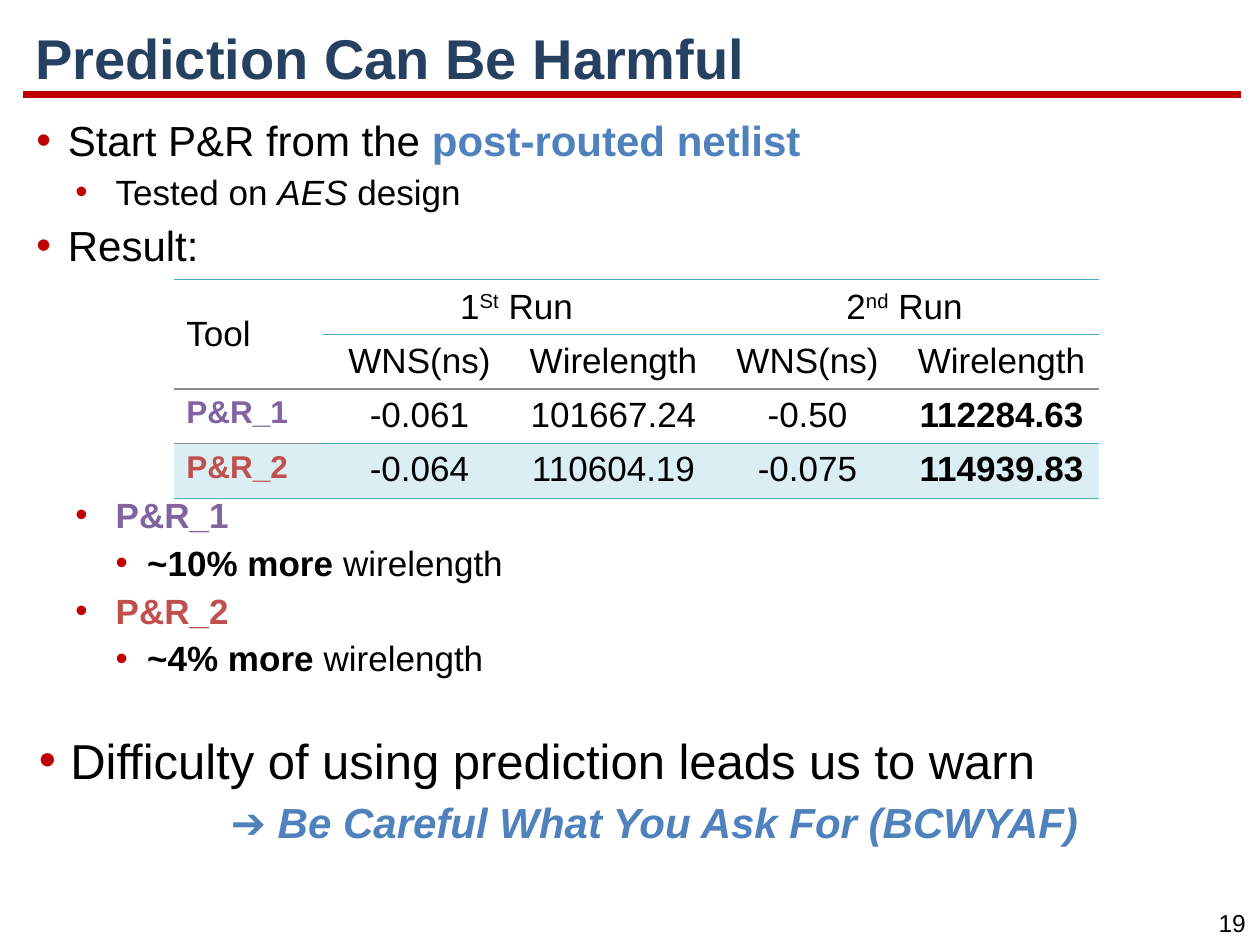
from dataclasses import dataclass

from lxml import etree
from pptx import Presentation
from pptx.dml.color import RGBColor as Rgb
from pptx.enum.shapes import MSO_CONNECTOR as Conn
from pptx.enum.text import MSO_ANCHOR as Anchor, PP_ALIGN as Align
from pptx.oxml.ns import qn
from pptx.util import Inches, Pt


@dataclass(frozen=True)
class Theme:
    font: str = "Arial"
    navy: str = "254061"
    red: str = "C00000"
    black: str = "000000"
    blue: str = "4F81BD"
    purple: str = "8064A2"
    brick: str = "C0504D"
    teal: str = "4BACC6"
    pale: str = "DBEEF4"
    gray: str = "8C8C8C"
    title: int = 32
    large: int = 28
    head: int = 24
    body: int = 20
    label: int = 18
    page: int = 14


T = Theme()
INDENTS = [(0.25, -0.25), (0.63, -0.32), (0.88, -0.25)]


def add_run(para, text, size=T.body, color=T.black, bold=False,
            italic=False, raised=False):
    run = para.add_run()
    run.text = text
    font = run.font
    font.name, font.size = T.font, Pt(size)
    font.bold, font.italic = bold, italic
    font.color.rgb = Rgb.from_string(color)
    if raised:
        font._element.set("baseline", "30000")


def add_box(slide, box, anchor=Anchor.TOP, wrap=True):
    frame = slide.shapes.add_textbox(*map(Inches, box)).text_frame
    frame.word_wrap = wrap
    frame.vertical_anchor = anchor
    return frame


def set_bullet(para, level):
    left, first = INDENTS[level]
    props = para._p.get_or_add_pPr()
    props.set("marL", str(Inches(left)))
    props.set("indent", str(Inches(first)))
    color = etree.SubElement(props, qn("a:buClr"))
    etree.SubElement(color, qn("a:srgbClr"), val=T.red)
    etree.SubElement(props, qn("a:buFont"), typeface=T.font)
    etree.SubElement(props, qn("a:buChar"), char="•")


def add_list(slide, box, items):
    """Each item is (level, size, runs); level None means a centred line."""
    frame = add_box(slide, box)
    for i, (level, size, runs) in enumerate(items):
        para = frame.add_paragraph() if i else frame.paragraphs[0]
        para.line_spacing = 0.85
        para.space_before = Pt(round(size * 0.345, 1) if i else 0)
        if level is None:
            para.alignment = Align.CENTER
            para._p.get_or_add_pPr().set("marL", str(Inches(0.31)))
        else:
            para.level = level
            set_bullet(para, level)
        for text, style in runs:
            add_run(para, text, size=size, **style)


def add_title(slide, box, text):
    left, top, width, _ = box
    rule = slide.shapes.add_connector(
        Conn.STRAIGHT, Inches(left), Inches(0.75),
        Inches(left + width), Inches(0.75))
    rule.line.color.rgb = Rgb.from_string(T.red)
    rule.line.width = Pt(4.5)
    etree.SubElement(rule._element.spPr, qn("a:effectLst"))
    para = add_box(slide, box, Anchor.MIDDLE).paragraphs[0]
    para.line_spacing = 0.9
    add_run(para, text, size=T.title, color=T.navy, bold=True)


def add_page(slide, box, text):
    para = add_box(slide, box, wrap=False).paragraphs[0]
    para.alignment = Align.CENTER
    add_run(para, text, size=T.page)


def set_edge(cell, side, color):
    props = cell._tc.get_or_add_tcPr()
    line = etree.Element(qn(f"a:{side}"), w=str(Pt(1)))
    fill = etree.SubElement(line, qn("a:solidFill"))
    etree.SubElement(fill, qn("a:srgbClr"), val=color)
    # Borders come before the fill, top before bottom.
    props.insert(len(props.findall(qn("a:lnT"))), line)


def fill_cell(cell, runs, align=Align.CENTER, anchor=Anchor.MIDDLE):
    cell.vertical_anchor = anchor
    para = cell.text_frame.paragraphs[0]
    para.alignment = align
    for text, style in runs:
        add_run(para, text, **style)


def add_results(slide, box, runs, heads, rows):
    left, top, width, height = box
    first, count = 1.18, len(runs) * len(heads)
    total = len(rows) + 2
    grid = slide.shapes.add_table(total, count + 1, *map(Inches, box)).table
    grid.first_row = grid.horz_banding = False
    # "No Style, No Grid"
    grid._tbl.tblPr.find(qn("a:tableStyleId")).text = (
        "{2D5ABB26-0587-4C30-8999-92F81FD0307C}")
    for i, col in enumerate(grid.columns):
        col.width = Inches((width - first) / count if i else first)
    for row in grid.rows:
        row.height = Inches(height / total)

    grid.cell(0, 0).merge(grid.cell(1, 0))
    fill_cell(grid.cell(0, 0), [("Tool", {})], Align.LEFT)
    for i, (num, suffix) in enumerate(runs):
        start = 1 + i * len(heads)
        grid.cell(0, start).merge(grid.cell(0, start + len(heads) - 1))
        fill_cell(grid.cell(0, start),
                  [(num, {}), (suffix, {"raised": True}), (" Run", {})])
        for j, head in enumerate(heads):
            fill_cell(grid.cell(1, start + j), [(head, {})])
    for r, (name, color, values) in enumerate(rows, 2):
        fill_cell(grid.cell(r, 0),
                  [(name, {"size": T.label, "color": color, "bold": True})],
                  Align.LEFT, Anchor.TOP)
        for c, value in enumerate(values, 1):
            fill_cell(grid.cell(r, c), [(value, {"bold": c == count})],
                      anchor=Anchor.TOP)

    last = total - 1
    for r in range(total):
        for c in range(count + 1):
            cell = grid.cell(r, c)
            if r == last:
                cell.fill.solid()
                cell.fill.fore_color.rgb = Rgb.from_string(T.pale)
                set_edge(cell, "lnB", T.teal)
            else:
                cell.fill.background()
            if c or r in (0, 2):
                set_edge(cell, "lnT", T.gray if r == 2 else T.teal)


def main():
    deck = Presentation()
    deck.slide_width, deck.slide_height = Inches(10), Inches(7.5)
    slide = deck.slides.add_slide(deck.slide_layouts[6])
    bold, accent = {"bold": True}, {"color": T.blue, "bold": True}

    add_title(slide, (0.18, 0.16, 9.67, 0.65), "Prediction Can Be Harmful")
    add_list(slide, (0.19, 0.92, 9.66, 1.25), [
        (0, T.head, [("Start P&R from the ", {}),
                     ("post-routed netlist", accent)]),
        (1, T.body, [("Tested on ", {}), ("AES ", {"italic": True}),
                     ("design", {})]),
        (0, T.head, [("Result:", {})]),
    ])
    add_results(
        slide, (1.38, 2.22, 7.34, 1.64),
        [("1", "St"), ("2", "nd")], ["WNS(ns)", "Wirelength"],
        [("P&R_1", T.purple, ["-0.061", "101667.24", "-0.50", "112284.63"]),
         ("P&R_2", T.brick, ["-0.064", "110604.19", "-0.075", "114939.83"])])
    notes = []
    for name, color, growth in [("P&R_1", T.purple, "~10% more"),
                                ("P&R_2", T.brick, "~4% more")]:
        notes += [(1, T.body, [(name, {"color": color, "bold": True})]),
                  (2, T.body, [(growth, bold), (" wirelength", {})])]
    add_list(slide, (0.19, 3.92, 9.66, 1.6), notes)
    add_list(slide, (0.21, 5.82, 9.66, 0.97), [
        (0, T.large,
         [("Difficulty of using prediction leads us to warn", {})]),
        (None, T.head, [("➔ Be Careful What You Ask For (BCWYAF)",
                         {**accent, "italic": True})]),
    ])
    add_page(slide, (9.56, 7.16, 0.44, 0.34), "19")
    deck.save("out.pptx")


if __name__ == "__main__":
    main()
